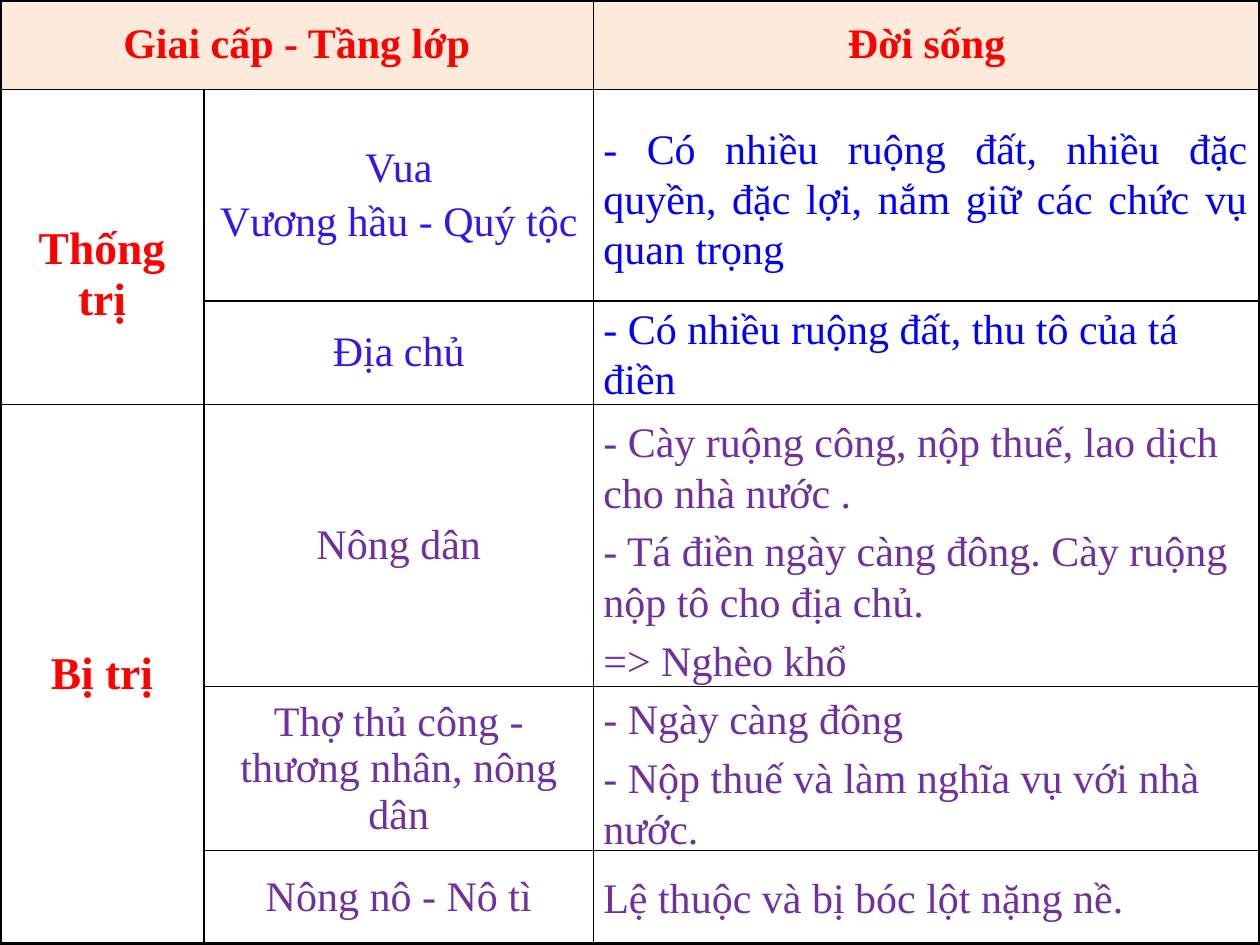
from dataclasses import dataclass

from lxml.etree import SubElement
from pptx import Presentation
from pptx.dml.color import RGBColor
from pptx.enum.text import MSO_ANCHOR as Anchor, MSO_AUTO_SIZE as AutoSize, PP_ALIGN as Align
from pptx.oxml.ns import qn
from pptx.util import Inches, Pt

COLORS = {"header": "FDEADA", "body": "FFFFFF", "line": "000000", "red": "FF0000",
          "indigo": "3415EB", "blue": "0000FF", "purple": "7030A0"}
FONT = "Times New Roman"
COLUMNS = [1.62, 3.09, 5.29]
ROWS = [0.71, 1.68, 0.82, 2.24, 1.3, 0.74]
TEXT_LEFT, TEXT_WIDTH = 4.69, 5.31
INNER_LINE, OUTER_LINE = 1, 2.25


@dataclass
class Label:
    row: int
    column: int
    lines: list[str]
    color: str
    size: int = 24
    bold: bool = False
    row_span: int = 1
    column_span: int = 1
    top_margin: float = 0.05


@dataclass
class Living:
    top: float
    height: float
    lines: list[str]
    color: str
    align: Align = Align.LEFT


LABELS = [
    Label(0, 0, ["Giai cấp - Tầng lớp"], "red", bold=True, column_span=2),
    Label(0, 2, ["Đời sống"], "red", bold=True),
    Label(1, 0, ["Thống trị"], "red", 26, True, row_span=2, top_margin=0.49),
    Label(1, 1, ["Vua", "Vương hầu - Quý tộc"], "indigo"),
    Label(2, 1, ["Địa chủ"], "indigo"),
    Label(3, 0, ["Bị trị"], "red", 26, True, row_span=3),
    Label(3, 1, ["Nông dân"], "purple"),
    Label(4, 1, ["Thợ thủ công - thương nhân, nông dân"], "purple"),
    Label(5, 1, ["Nông nô - Nô tì"], "purple"),
]
LIVINGS = [
    Living(0.92, 1.31, ["- Có nhiều ruộng đất, nhiều đặc quyền, đặc lợi, nắm giữ "
                        "các chức vụ quan trọng"], "blue", Align.JUSTIFY),
    Living(2.35, 0.91, ["- Có nhiều ruộng đất, thu tô của tá điền"], "blue"),
    Living(3.25, 2.28, ["- Cày ruộng công, nộp thuế, lao dịch cho nhà nước .",
                        "- Tá điền ngày càng đông. Cày ruộng nộp tô cho địa chủ.",
                        "=> Nghèo khổ"], "purple"),
    Living(5.45, 1.39, ["- Ngày càng đông",
                        "- Nộp thuế và làm nghĩa vụ với nhà nước."], "purple"),
    Living(6.87, 0.5, ["Lệ thuộc và bị bóc lột nặng nề."], "purple"),
]


def write_lines(frame, lines: list[str], color: str, align: Align,
                size: int = 24, bold: bool = False) -> None:
    font_format = {"name": FONT, "size": Pt(size), "bold": bold}
    for index, line in enumerate(lines):
        para = frame.add_paragraph() if index else frame.paragraphs[0]
        para.alignment = align
        para.space_before = Pt(0.2 * size if index else 0)
        span = para.add_run()
        span.text = line
        for name, value in font_format.items():
            setattr(span.font, name, value)
        span.font.color.rgb = RGBColor.from_string(COLORS[color])


def draw_borders(cell, row: int, column: int) -> None:
    """Heavy lines on the table's rim, thin lines inside."""
    row_span = cell.span_height if cell.is_merge_origin else 1
    column_span = cell.span_width if cell.is_merge_origin else 1
    on_rim = {"lnL": column == 0, "lnR": column + column_span == len(COLUMNS),
              "lnT": row == 0, "lnB": row + row_span == len(ROWS)}
    properties = cell._tc.get_or_add_tcPr()
    for position, (side, outer) in enumerate(on_rim.items()):
        width = Pt(OUTER_LINE if outer else INNER_LINE)
        line = SubElement(properties, qn(f"a:{side}"), w=str(int(width)))
        fill = SubElement(line, qn("a:solidFill"))
        SubElement(fill, qn("a:srgbClr"), val=COLORS["line"])
        properties.insert(position, line)


def draw_table(page) -> None:
    table = page.shapes.add_table(len(ROWS), len(COLUMNS), 0, 0, Inches(sum(COLUMNS)),
                                  Inches(sum(ROWS))).table
    table.first_row = table.horz_banding = False
    for column, width in zip(table.columns, COLUMNS):
        column.width = Inches(width)
    for row, height in zip(table.rows, ROWS):
        row.height = Inches(height)

    # Class labels and merged cells
    for label in LABELS:
        cell = table.cell(label.row, label.column)
        if label.row_span * label.column_span > 1:
            cell.merge(table.cell(label.row + label.row_span - 1,
                                  label.column + label.column_span - 1))
        cell.vertical_anchor = Anchor.MIDDLE
        cell.margin_top = Inches(label.top_margin)
        write_lines(cell.text_frame, label.lines, label.color, Align.CENTER,
                    label.size, label.bold)

    # Fills and borders
    for row in range(len(ROWS)):
        for column in range(len(COLUMNS)):
            cell = table.cell(row, column)
            cell.fill.solid()
            cell.fill.fore_color.rgb = RGBColor.from_string(COLORS["body" if row else "header"])
            if not cell.is_spanned:
                draw_borders(cell, row, column)


def draw_living(page, living: Living) -> None:
    box = page.shapes.add_textbox(*map(Inches, (TEXT_LEFT, living.top, TEXT_WIDTH, living.height)))
    box.text_frame.word_wrap = True
    box.text_frame.auto_size = AutoSize.SHAPE_TO_FIT_TEXT
    write_lines(box.text_frame, living.lines, living.color, living.align)


def main() -> None:
    deck = Presentation()
    deck.slide_width, deck.slide_height = Inches(10), Inches(7.5)
    page = deck.slides.add_slide(deck.slide_layouts[6])
    draw_table(page)
    for living in LIVINGS:
        draw_living(page, living)
    deck.save("out.pptx")


if __name__ == "__main__":
    main()
